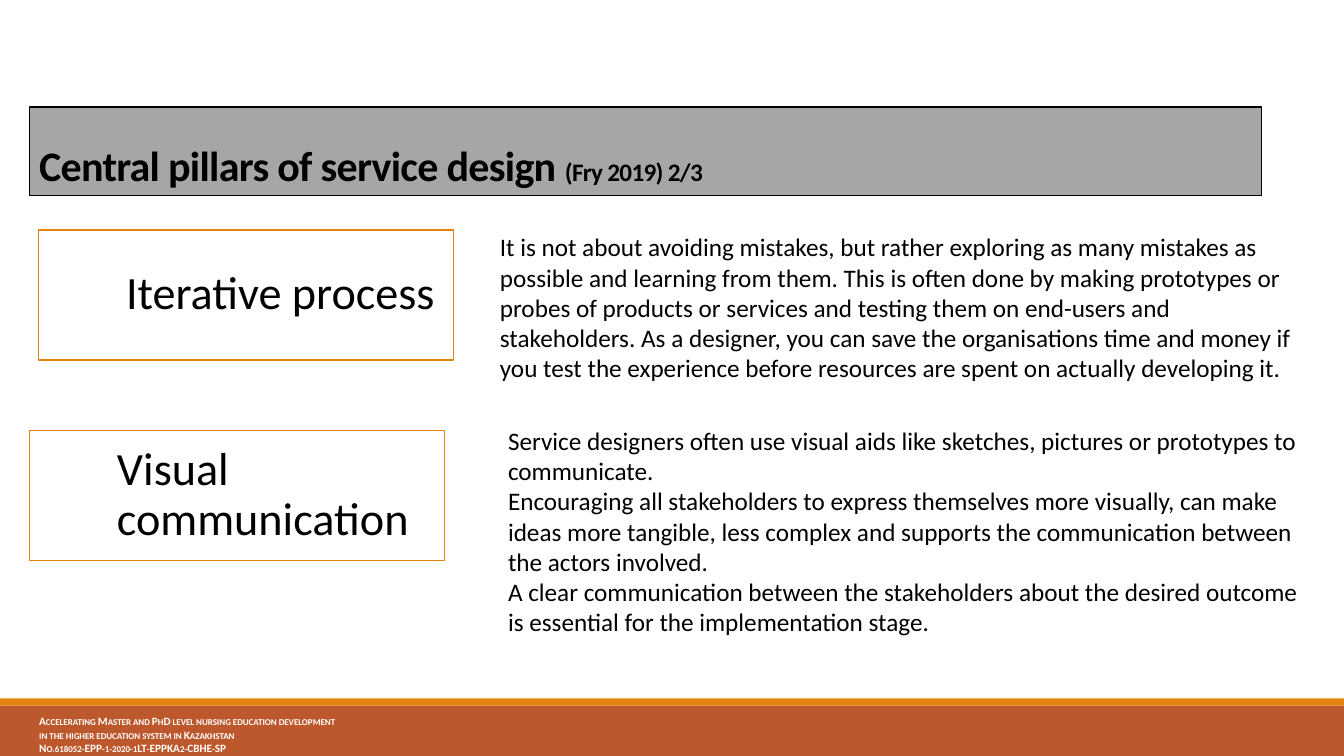
from lxml.etree import SubElement
from pptx import Presentation
from pptx.dml.color import RGBColor
from pptx.enum.shapes import MSO_SHAPE as Shape
from pptx.enum.text import MSO_ANCHOR as Anchor, PP_ALIGN as Align
from pptx.oxml.ns import qn
from pptx.util import Pt

PX = 9144
WIDTH, HEIGHT = 1333, 750
BLACK = RGBColor(0x00, 0x00, 0x00)
WHITE = RGBColor(0xFF, 0xFF, 0xFF)
GREY = RGBColor(0xA6, 0xA6, 0xA6)
ORANGE = RGBColor(0xE4, 0x83, 0x12)
RUST = RGBColor(0xBD, 0x58, 0x2C)

BODY = {"name": "Calibri", "size": Pt(18)}
PILLAR = {"name": "Calibri", "size": Pt(33)}
TITLE = {"name": "Calibri", "size": Pt(30), "bold": True}
CITATION = {**TITLE, "size": Pt(18)}
FOOTER = {"name": "Calibri", "size": Pt(8), "bold": True}

FOOTER_LINES = [
    "Accelerating Master and PhD level nursing education development",
    "in the higher education system in Kazakhstan",
    "No.618052-EPP-1-2020-1LT-EPPKA2-CBHE-SP",
]
PILLARS = [
    ("Iterative process", (38, 228, 412, 129), (486, 225, 809, 162), [
        "It is not about avoiding mistakes, but rather exploring as many mistakes as "
        "possible and learning from them. This is often done by making prototypes or "
        "probes of products or services and testing them on end-users and stakeholders. "
        "As a designer, you can save the organisations time and money if you test the "
        "experience before resources are spent on actually developing it.",
    ]),
    ("Visual communication", (29, 427, 412, 129), (494, 417, 822, 222), [
        "Service designers often use visual aids like sketches, pictures or prototypes "
        "to communicate.",
        "Encouraging all stakeholders to express themselves more visually, can make ideas "
        "more tangible, less complex and supports the communication between the actors "
        "involved.",
        "A clear communication between the stakeholders about the desired outcome is "
        "essential for the implementation stage.",
    ]),
]


def scaled(box):
    return [length * PX for length in box]


def add_rect(page, box, fill, line=None):
    rect = page.shapes.add_shape(Shape.RECTANGLE, *scaled(box))
    rect.shadow.inherit = False
    rect.fill.solid()
    rect.fill.fore_color.rgb = fill
    if line is None:
        rect.line.fill.background()
    else:
        rect.line.color.rgb = line
        rect.line.width = Pt(1)
    return rect


def add_span(para, text, style, color=BLACK, **extras):
    para.alignment = Align.LEFT
    span = para.add_run()
    span.text = text
    for key, value in style.items():
        setattr(span.font, key, value)
    span.font.color.rgb = color
    for key, value in extras.items():
        span._r.get_or_add_rPr().set(key, value)


def add_text(page, box, lines, style, color=BLACK, **extras):
    frame = page.shapes.add_textbox(*scaled(box)).text_frame
    frame.word_wrap = True
    for index, line in enumerate(lines):
        para = frame.add_paragraph() if index else frame.paragraphs[0]
        add_span(para, line, style, color, **extras)


def add_footer(page, box):
    left, top, width, height = box
    stripe = 7
    add_rect(page, (left, top + stripe, width, height - stripe), RUST)
    add_rect(page, (left, top, width, stripe), ORANGE)
    add_text(page, (left + 29, top + 11, 459, height - 11), FOOTER_LINES,
             FOOTER, WHITE, cap="small")


def add_title(page, box):
    frame = add_rect(page, box, GREY, BLACK).text_frame
    frame.word_wrap = True
    frame.vertical_anchor = Anchor.BOTTOM
    para = frame.paragraphs[0]
    para.line_spacing = 0.85
    add_span(para, "Central pillars of service design ", TITLE, spc="-50")
    add_span(para, "(Fry 2019) 2/3", CITATION, spc="-50")


def add_pillar(page, box, name):
    card = add_rect(page, box, WHITE, ORANGE)
    color = card._element.spPr.find(qn("a:solidFill"))[0]
    SubElement(color, qn("a:alpha"), val="40000")
    frame = card.text_frame
    margins = {"margin_left": 87, "margin_top": 14, "margin_right": 14, "margin_bottom": 14}
    for key, value in margins.items():
        setattr(frame, key, value * PX)
    frame.word_wrap = True
    frame.vertical_anchor = Anchor.MIDDLE
    para = frame.paragraphs[0]
    para.line_spacing = 0.9
    add_span(para, name, PILLAR)


def main():
    deck = Presentation()
    deck.slide_width, deck.slide_height = scaled((WIDTH, HEIGHT))
    page = deck.slides.add_slide(deck.slide_layouts[6])
    add_footer(page, (0, 693, WIDTH, HEIGHT - 693))
    add_title(page, (29, 106, 1222, 88))
    for name, card_box, text_box, lines in PILLARS:
        add_pillar(page, card_box, name)
        add_text(page, text_box, lines, BODY)
    deck.save("out.pptx")


if __name__ == "__main__":
    main()
